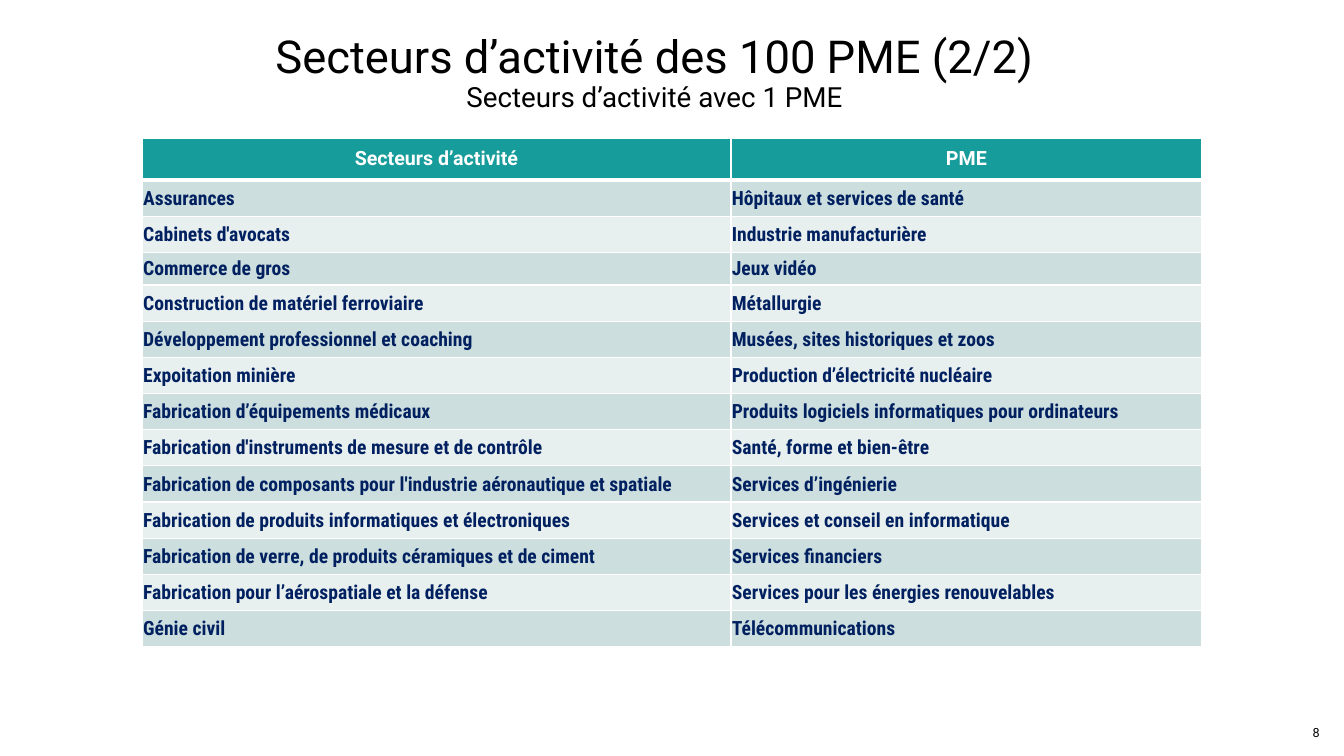
from dataclasses import dataclass
from pptx import Presentation
from pptx.dml.color import RGBColor
from pptx.enum import text as t
from pptx.oxml import parse_xml
from pptx.oxml.ns import nsdecls
from pptx.util import Pt


@dataclass(frozen=True)
class Theme:
    black: str = "000000"
    white: str = "FFFFFF"
    teal: str = "169C9A"
    navy: str = "002060"
    bands: tuple = ("CCDEDE", "E8EFEF")
    font: str = "Roboto"
    slim: str = "Roboto Condensed"
    title: float = 32.4
    sub: float = 19.8
    body: float = 14
    page: float = 9


THEME = Theme()
HEADS = ("Secteurs d’activité", "PME")
ROWS = (
    ("Assurances", "Hôpitaux et services de santé"),
    ("Cabinets d'avocats", "Industrie manufacturière"),
    ("Commerce de gros", "Jeux vidéo"),
    ("Construction de matériel ferroviaire", "Métallurgie"),
    ("Développement professionnel et coaching", "Musées, sites historiques et zoos"),
    ("Expoitation minière", "Production d’électricité nucléaire"),
    ("Fabrication d’équipements médicaux", "Produits logiciels informatiques pour ordinateurs"),
    ("Fabrication d'instruments de mesure et de contrôle", "Santé, forme et bien-être"),
    ("Fabrication de composants pour l'industrie aéronautique et spatiale", "Services d’ingénierie"),
    ("Fabrication de produits informatiques et électroniques", "Services et conseil en informatique"),
    ("Fabrication de verre, de produits céramiques et de ciment", "Services financiers"),
    ("Fabrication pour l’aérospatiale et la défense", "Services pour les énergies renouvelables"),
    ("Génie civil", "Télécommunications"),
)


def add_run(para, words, size, color, font=THEME.font, bold=False):
    run = para.add_run()
    run.text = words
    run.font.size = Pt(size)
    run.font.name = font
    run.font.bold = bold
    run.font.color.rgb = RGBColor.from_string(color)


def add_box(slide, box, align, anchor):
    frame = slide.shapes.add_textbox(*map(Pt, box)).text_frame
    frame.word_wrap = True
    frame.vertical_anchor = anchor
    para = frame.paragraphs[0]
    para.alignment = align
    return para


def add_title(slide, box):
    para = add_box(slide, box, t.PP_ALIGN.CENTER, t.MSO_ANCHOR.MIDDLE)
    para.line_spacing = 0.9
    add_run(para, "Secteurs d’activité des 100 PME (2/2)", THEME.title, THEME.black)
    para.add_line_break()
    add_run(para, "Secteurs d’activité avec 1 PME", THEME.sub, THEME.black)


def add_edges(cell, base):
    props = cell._tc.get_or_add_tcPr()
    for spot, (side, width) in enumerate(zip("LRTB", (1, 1, 1, base))):
        props.insert(spot, parse_xml(
            f'<a:ln{side} {nsdecls("a")} w="{Pt(width)}"><a:solidFill>'
            f'<a:srgbClr val="{THEME.white}"/></a:solidFill></a:ln{side}>'))


def fill_cell(cell, words, row):
    head = row == 0
    cell.vertical_anchor = t.MSO_ANCHOR.MIDDLE
    cell.fill.solid()
    shade = THEME.teal if head else THEME.bands[(row - 1) % 2]
    cell.fill.fore_color.rgb = RGBColor.from_string(shade)
    para = cell.text_frame.paragraphs[0]
    if head:
        para.alignment = t.PP_ALIGN.CENTER
        add_run(para, words, THEME.body, THEME.white, bold=True)
    else:
        cell.margin_left = cell.margin_right = cell.margin_top = Pt(0.7)
        cell.margin_bottom = 0
        add_run(para, words, THEME.body, THEME.navy, THEME.slim, True)
    add_edges(cell, 3 if head else 1)


def add_grid(slide, box):
    data = (HEADS, *ROWS)
    table = slide.shapes.add_table(len(data), len(HEADS), *map(Pt, box)).table
    first = 420.5
    for col, width in zip(table.columns, (first, box[2] - first)):
        col.width = Pt(width)
    high, low = 30.2, 23.3
    step = (box[3] - high - low) / (len(data) - 2)
    tall = {0: high, 3: low}
    for row, pair in enumerate(data):
        table.rows[row].height = Pt(tall.get(row, step))
        for col, words in enumerate(pair):
            fill_cell(table.cell(row, col), words, row)


def add_page(slide, box):
    para = add_box(slide, box, t.PP_ALIGN.RIGHT, t.MSO_ANCHOR.MIDDLE)
    add_run(para, "8", THEME.page, THEME.black)


def main():
    deck = Presentation()
    deck.slide_width, deck.slide_height = Pt(960), Pt(540)
    slide = deck.slides.add_slide(deck.slide_layouts[6])
    add_title(slide, (48, 21.6, 839, 62.6))
    add_grid(slide, (101.6, 98.5, 757, 363.6))
    add_page(slide, (916, 508.5, 33.8, 28.8))
    deck.save("out.pptx")


if __name__ == "__main__":
    main()
